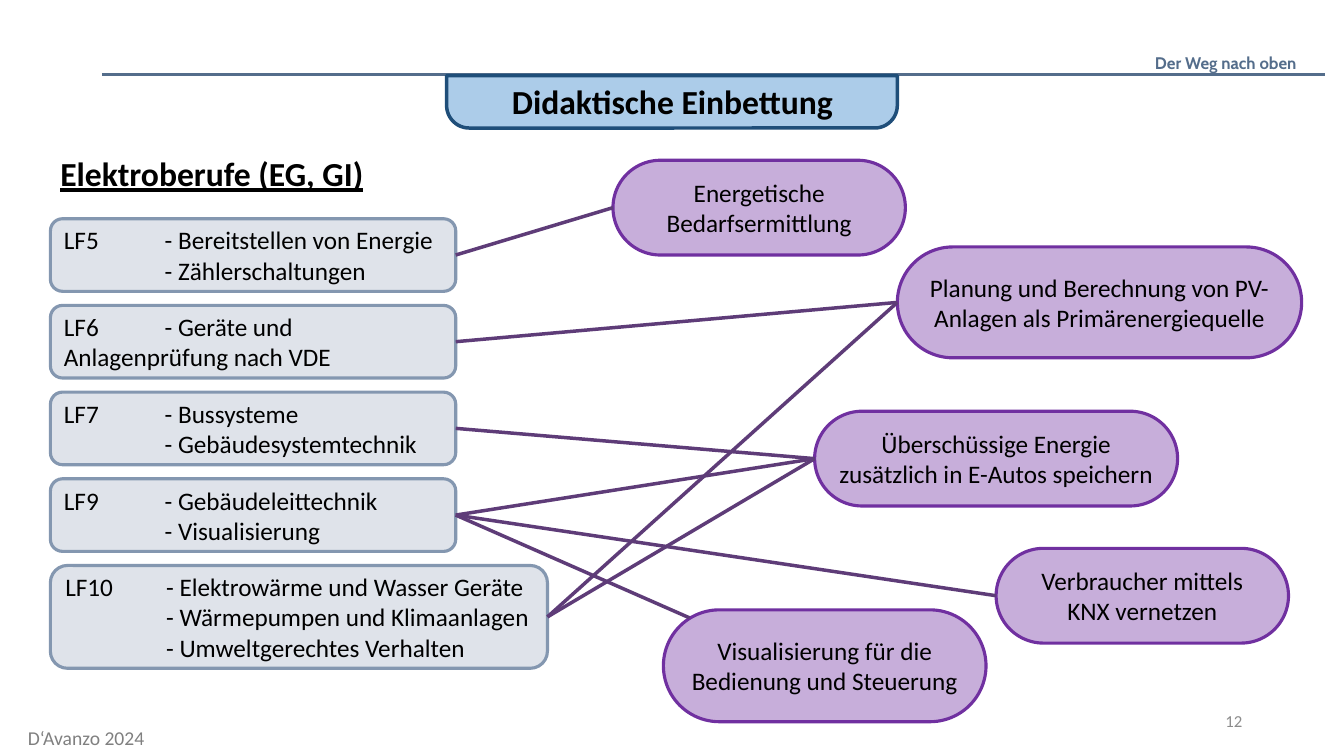
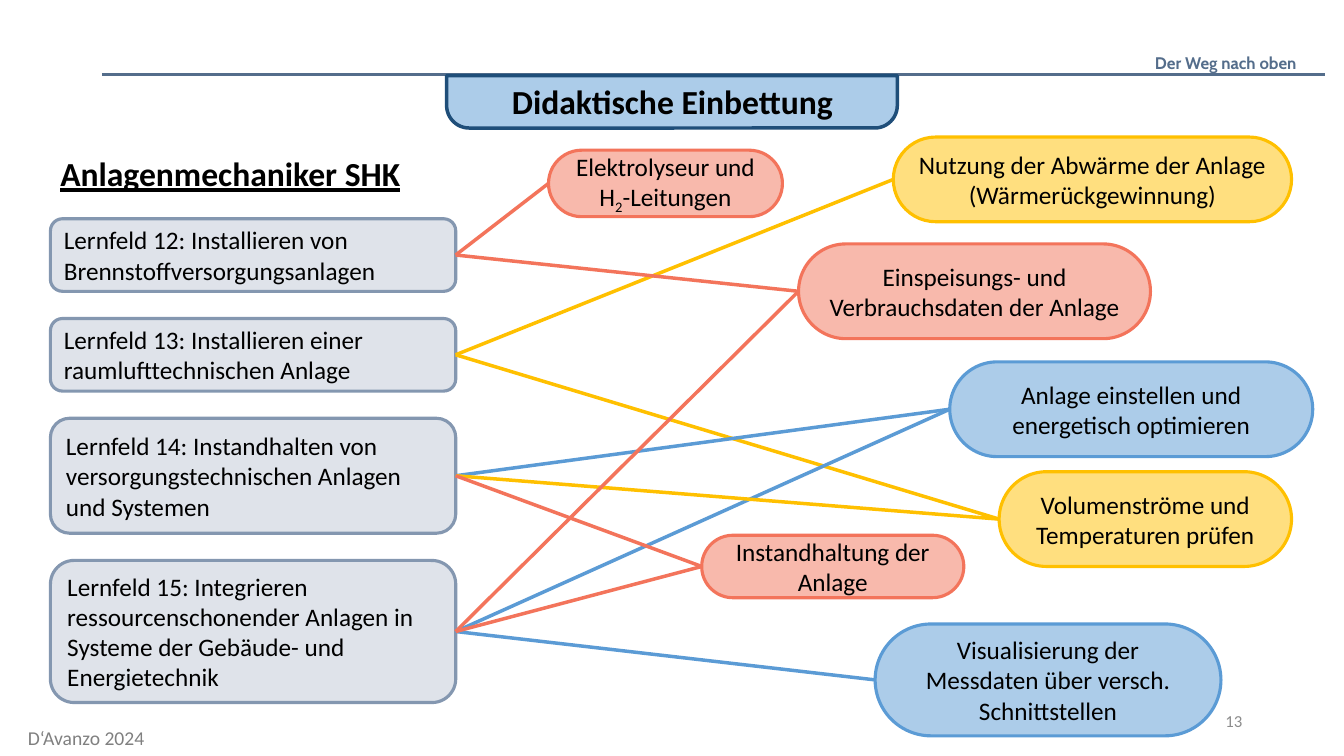
from lxml.etree import SubElement
from pptx import Presentation
from pptx.dml.color import RGBColor
from pptx.enum.shapes import MSO_CONNECTOR, MSO_SHAPE
from pptx.enum.text import MSO_ANCHOR, PP_ALIGN
from pptx.oxml.ns import qn
from pptx.util import Inches, Pt

SLATE = "546D8B"
BLACK = "000000"
BLUE = "5B9BD5"
RED = "F3745B"
YELLOW = "FFC000"
PURPLE = "7030A0"
PLUM = "5E3C78"
FIELD_TOP, FIELD_LEFT, FIELD_WIDTH = 2.17, 0.5, 4.02
FIELD_TABS = (1, 2, 3)
LEFT_SITE, RIGHT_SITE = 1, 3

ELECTRICAL_FIELDS = [
    ("LF5\t- Bereitstellen von Energie\n\t- Zählerschaltungen", 0.72, FIELD_WIDTH),
    ("LF6\t- Geräte und \tAnlagenprüfung nach VDE", 0.72, FIELD_WIDTH),
    ("LF7\t- Bussysteme\n\t- Gebäudesystemtechnik", 0.72, FIELD_WIDTH),
    ("LF9\t- Gebäudeleittechnik\n\t- Visualisierung", 0.72, FIELD_WIDTH),
    ("LF10\t- Elektrowärme und Wasser Geräte\n\t- Wärmepumpen und Klimaanlagen"
     "\n\t- Umweltgerechtes Verhalten", 1.02, 4.93),
]
ELECTRICAL_TOPICS = {
    "demand": ("Energetische Bedarfsermittlung", (6.08, 1.59, 2.9, 0.94), PURPLE),
    "solar": ("Planung und Berechnung von PV-Anlagen als Primärenergiequelle",
              (8.9, 2.45, 4.01, 1.1), PURPLE),
    "display": ("Visualisierung für die Bedienung und Steuerung",
                (6.58, 6.05, 3.2, 1.11), PURPLE),
    "cars": ("Überschüssige Energie zusätzlich in E-Autos speichern",
             (8.08, 4.08, 3.6, 0.94), PURPLE),
    "network": ("Verbraucher mittels KNX vernetzen", (9.88, 5.44, 2.9, 0.94), PURPLE),
}
ELECTRICAL_LINKS = [
    (0, "demand"), (1, "solar"), (4, "solar"), (3, "network"),
    (3, "display"), (2, "cars"), (3, "cars"), (4, "cars"),
]

PLUMBING_FIELDS = [
    ("Lernfeld 12: Installieren von Brennstoffversorgungsanlagen", 0.72, FIELD_WIDTH),
    ("Lernfeld 13: Installieren einer raumlufttechnischen Anlage", 0.72, FIELD_WIDTH),
    ("Lernfeld 14: Instandhalten von versorgungstechnischen Anlagen und Systemen",
     1.14, FIELD_WIDTH),
    ("Lernfeld 15: Integrieren ressourcenschonender Anlagen in Systeme der "
     "Gebäude- und Energietechnik", 1.41, FIELD_WIDTH),
]
PLUMBING_TOPICS = {
    "hydrogen": ("Elektrolyseur und H_2_-Leitungen", (5.44, 1.49, 2.32, 0.66), RED),
    "heat": ("Nutzung der Abwärme der Anlage\n(Wärmerückgewinnung)",
             (8.86, 1.36, 3.95, 0.84), YELLOW),
    "display": ("Visualisierung der Messdaten über versch. Schnittstellen",
                (8.68, 6.19, 3.43, 1.11), BLUE),
    "tuning": ("Anlage einstellen und energetisch optimieren",
               (9.42, 3.59, 3.6, 0.94), BLUE),
    "flow": ("Volumenströme und Temperaturen prüfen", (9.91, 4.68, 2.9, 0.94), YELLOW),
    "upkeep": ("Instandhaltung der Anlage", (6.96, 5.31, 2.6, 0.62), RED),
    "usage": ("Einspeisungs- und Verbrauchsdaten der Anlage",
              (7.92, 2.42, 3.49, 0.94), RED),
}
PLUMBING_LINKS = [
    (0, "hydrogen"), (1, "heat"), (1, "flow"), (3, "display"), (2, "tuning"),
    (3, "tuning"), (2, "flow"), (3, "upkeep"), (2, "upkeep"), (3, "usage"), (0, "usage"),
]


def rgb(value):
    """Turn a hex string into a colour."""
    return RGBColor.from_string(value)


def set_tabs(paragraph, stops):
    """Give a paragraph left tab stops."""
    tabs = SubElement(paragraph._p.get_or_add_pPr(), qn("a:tabLst"))
    for stop in stops:
        SubElement(tabs, qn("a:tab"), pos=str(Inches(stop)), algn="l")


def write(frame, text, size=18, color=BLACK, font="Calibri", bold=False, underline=False,
          align=PP_ALIGN.LEFT, anchor=MSO_ANCHOR.TOP, margin=None, tabs=()):
    """Fill a text frame, with underscores around subscripts."""
    frame.word_wrap = True
    frame.vertical_anchor = anchor
    if margin is not None:
        frame.margin_left = frame.margin_right = Inches(margin)
        frame.margin_top = frame.margin_bottom = Inches(margin)
    for index, line in enumerate(text.split("\n")):
        paragraph = frame.add_paragraph() if index else frame.paragraphs[0]
        paragraph.alignment = align
        if tabs:
            set_tabs(paragraph, tabs)
        for part, piece in enumerate(line.split("_")):
            run = paragraph.add_run()
            run.text = piece
            run.font.name = font
            run.font.size = Pt(size)
            run.font.bold = bold
            run.font.underline = underline
            run.font.color.rgb = rgb(color)
            if part % 2:
                run.font._element.set("baseline", "-25000")


def add_label(slide, text, box, **style):
    """Add a plain text box."""
    label = slide.shapes.add_textbox(*map(Inches, box))
    write(label.text_frame, text, **style)


def add_panel(slide, kind, box, fill, opacity, outline, weight=2.25):
    """Add an outlined shape with a translucent fill."""
    panel = slide.shapes.add_shape(kind, *map(Inches, box))
    panel.shadow.inherit = False
    panel.fill.solid()
    panel.fill.fore_color.rgb = rgb(fill)
    tint = panel._element.spPr.find(qn("a:solidFill")).find(qn("a:srgbClr"))
    SubElement(tint, qn("a:alpha")).set("val", str(opacity * 1000))
    panel.line.color.rgb = rgb(outline)
    panel.line.width = Pt(weight)
    return panel


def add_line(slide, start, end, color, weight):
    """Add a straight line without shadow."""
    line = slide.shapes.add_connector(MSO_CONNECTOR.STRAIGHT, *start, *end)
    line.line.color.rgb = rgb(color)
    line.line.width = Pt(weight)
    SubElement(line._element.spPr, qn("a:effectLst"))
    return line


def add_frame(slide, heading, number):
    """Add the header, title band, heading and footer."""
    add_label(slide, "Der Weg nach oben", (11.21, 0.52, 1.65, 0.2), size=12, color=SLATE,
              font="Cabin", bold=True, align=PP_ALIGN.RIGHT, margin=0)
    add_line(slide, (Inches(1.01), Inches(0.74)), (Inches(13.14), Inches(0.74)), SLATE, 2.25)
    band = add_panel(slide, MSO_SHAPE.ROUND_2_SAME_RECTANGLE, (4.43, 0.75, 4.47, 0.52),
                     BLUE, 50, "1F4E79", 2.5)
    band.adjustments[0] = 0
    band.adjustments[1] = 0.43
    add_label(slide, "Didaktische Einbettung", (3.5, 0.75, 6.34, 0.5), size=24, bold=True,
              align=PP_ALIGN.CENTER)
    add_label(slide, heading, (FIELD_LEFT, 1.47, 6.34, 0.5), size=24, bold=True,
              underline=True)
    add_label(slide, str(number), (9.42, 6.95, 3, 0.4), size=12, color="8C8C8C",
              align=PP_ALIGN.RIGHT, anchor=MSO_ANCHOR.MIDDLE)
    add_label(slide, "D‘Avanzo 2024", (0.08, 7.15, 1.55, 0.34), size=14, color="808080",
              align=PP_ALIGN.CENTER)


def add_fields(slide, fields, gap):
    """Stack the learning fields and return their boxes."""
    boxes, top = [], FIELD_TOP
    for text, height, width in fields:
        field = add_panel(slide, MSO_SHAPE.ROUNDED_RECTANGLE,
                          (FIELD_LEFT, top, width, height), "ADB9CA", 39, "8497B0")
        write(field.text_frame, text, anchor=MSO_ANCHOR.MIDDLE, tabs=FIELD_TABS)
        boxes.append(field)
        top += height + gap
    return boxes


def add_topic(slide, text, box, color, opacity):
    """Add a pill-shaped topic."""
    topic = add_panel(slide, MSO_SHAPE.ROUNDED_RECTANGLE, box, color, opacity, color)
    topic.adjustments[0] = 0.5
    write(topic.text_frame, text, align=PP_ALIGN.CENTER, anchor=MSO_ANCHOR.MIDDLE)
    return topic


def add_link(slide, field, topic, color, offset=None):
    """Join a field to a topic, at its left side or at an offset from its corner."""
    start = field.left + field.width, field.top + field.height // 2
    dx, dy = map(Inches, offset) if offset else (0, topic.height // 2)
    link = add_line(slide, start, (topic.left + dx, topic.top + dy), color, 2.5)
    link.begin_connect(field, RIGHT_SITE)
    if not offset:
        link.end_connect(topic, LEFT_SITE)


def add_mapping(deck, heading, number, fields, gap, topics, opacity, links,
                link_color=None, offsets=None):
    """Build a slide that maps learning fields to topics."""
    slide = deck.slides.add_slide(deck.slide_layouts[6])
    add_frame(slide, heading, number)
    field_boxes = add_fields(slide, fields, gap)
    pills = {key: add_topic(slide, *topic, opacity) for key, topic in topics.items()}
    for field, key in links:
        add_link(slide, field_boxes[field], pills[key], link_color or topics[key][2],
                 (offsets or {}).get(key))


def main():
    """Build and save the deck."""
    deck = Presentation()
    deck.slide_width, deck.slide_height = Inches(13.33), Inches(7.5)
    add_mapping(deck, "Elektroberufe (EG, GI)", 12, ELECTRICAL_FIELDS, 0.14,
                ELECTRICAL_TOPICS, 39, ELECTRICAL_LINKS, link_color=PLUM,
                offsets={"display": (0.26, 0.08)})
    add_mapping(deck, "Anlagenmechaniker SHK", 13, PLUMBING_FIELDS, 0.27,
                PLUMBING_TOPICS, 50, PLUMBING_LINKS)
    deck.save("out.pptx")


if __name__ == "__main__":
    main()
